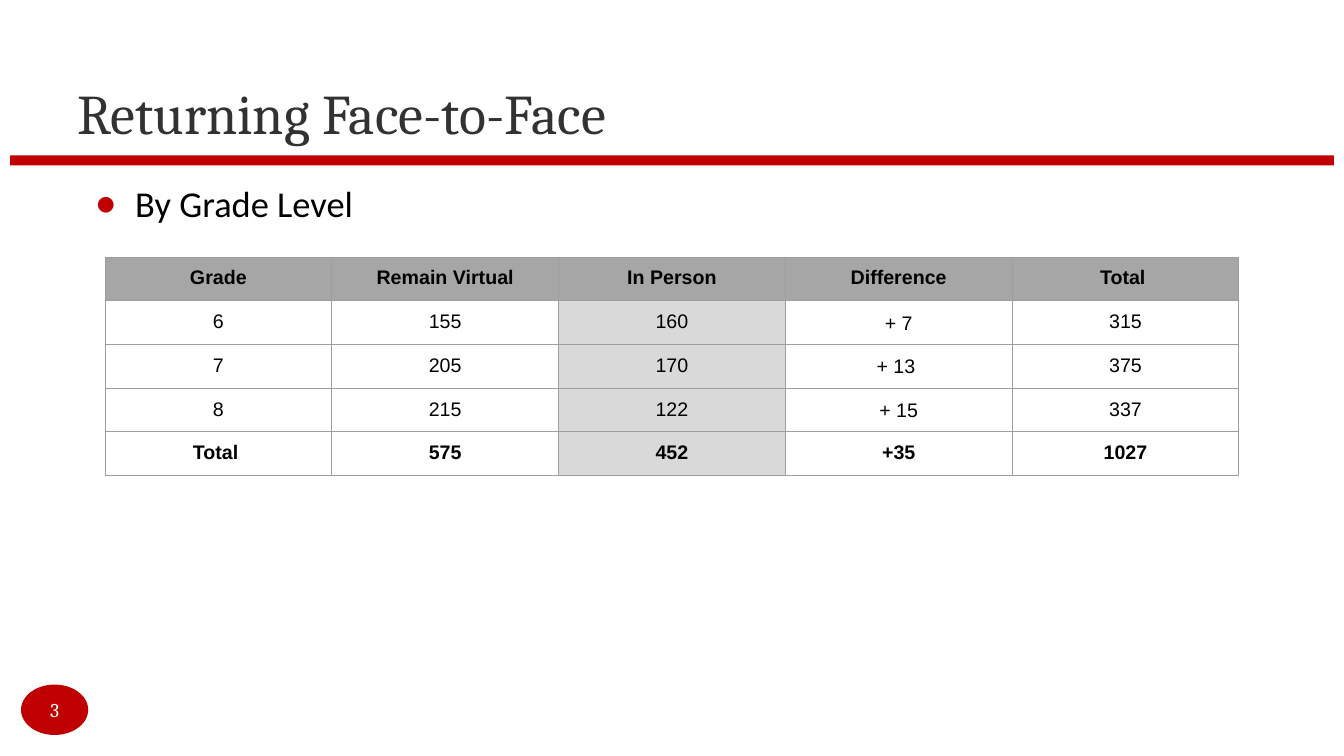
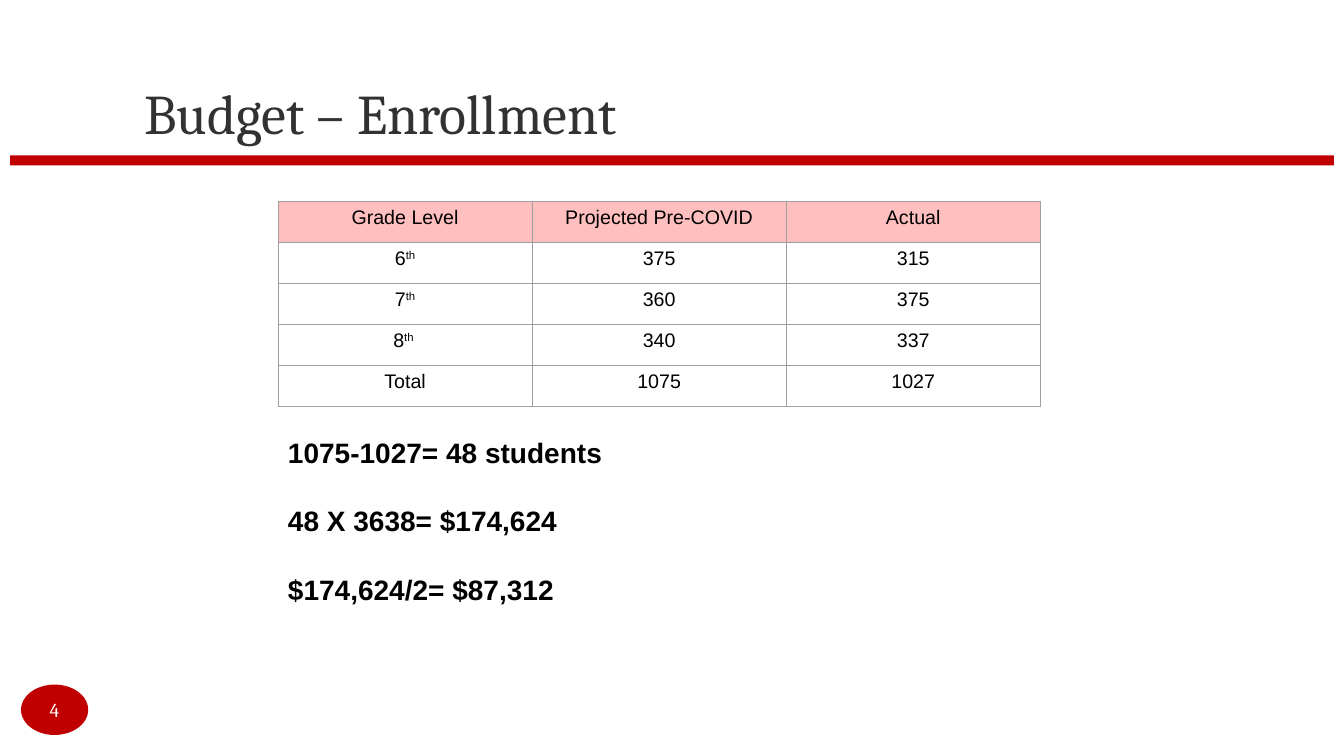
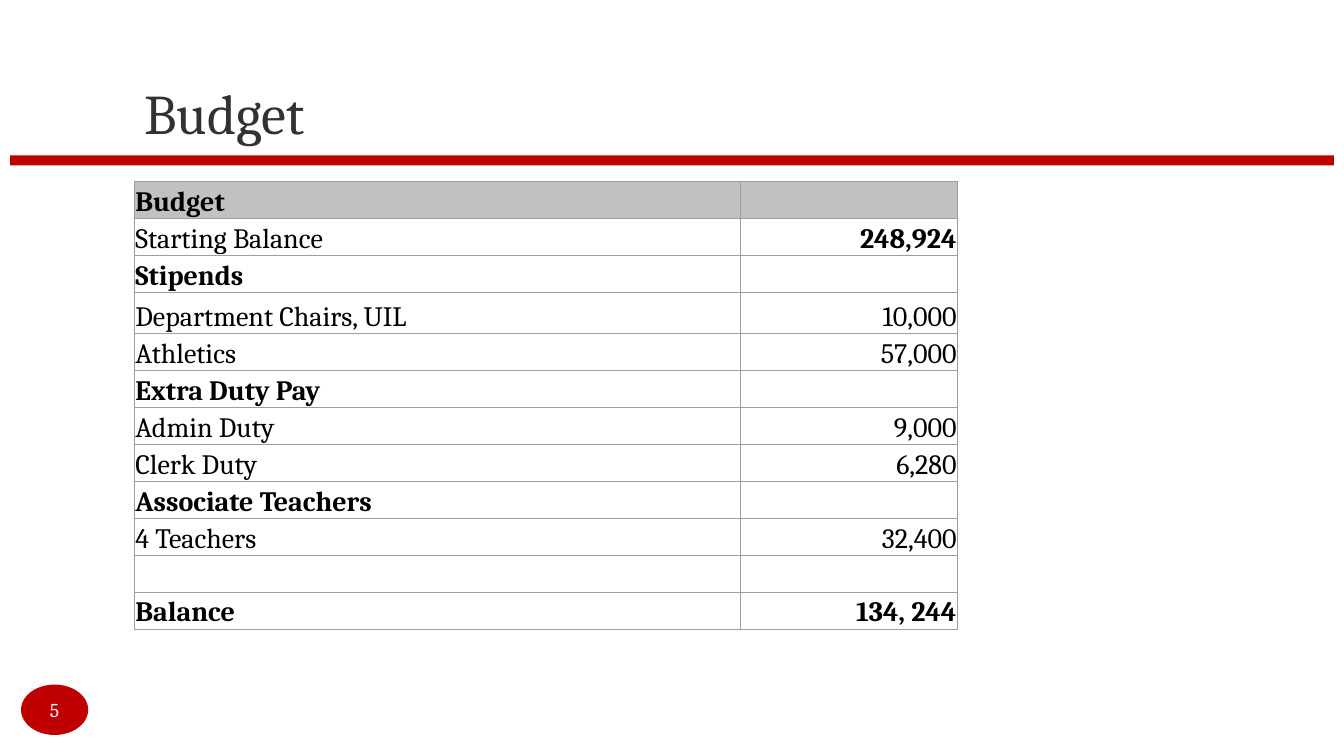
from dataclasses import dataclass
from typing import Callable, Optional

from lxml import etree
from pptx import Presentation, util as u
from pptx.dml.color import RGBColor
from pptx.enum import shapes, text
from pptx.oxml import ns

# Shared look
RED = RGBColor(0xC0, 0x00, 0x00)
WHITE = RGBColor(0xFF, 0xFF, 0xFF)
BLACK = RGBColor(0x00, 0x00, 0x00)
TITLE_GREY = RGBColor(0x32, 0x32, 0x32)
BORDER_GREY = RGBColor(0x9E, 0x9E, 0x9E)
HEADER_GREY = RGBColor(0xA6, 0xA6, 0xA6)
COLUMN_GREY = RGBColor(0xD9, 0xD9, 0xD9)
BUDGET_GREY = RGBColor(0xC1, 0xC1, 0xC1)
PINK = RGBColor(0xFF, 0xBF, 0xBF)
SERIF, SANS, BODY = "Cambria", "Arial", "Calibri"
LEFT, CENTER, RIGHT = text.PP_ALIGN.LEFT, text.PP_ALIGN.CENTER, text.PP_ALIGN.RIGHT

# The slide is a grid of 160 columns by 90 rows
WIDTH, HEIGHT = u.Inches(13.33), u.Inches(7.5)
COLUMNS, ROWS = 160, 90


def col(n: float) -> u.Emu:
    return u.Emu(round(WIDTH * n / COLUMNS))


def row(n: float) -> u.Emu:
    return u.Emu(round(HEIGHT * n / ROWS))


@dataclass(frozen=True)
class Box:
    x: float
    y: float
    w: float
    h: float

    def emu(self) -> tuple:
        return col(self.x), row(self.y), col(self.w), row(self.h)


@dataclass(frozen=True)
class Grid:
    """A table: a caret in a cell's text starts a superscript."""
    x: float
    y: float
    widths: list
    heights: list
    cells: list
    aligns: list
    font: str
    size: int
    margins: tuple  # left, top, right, bottom, in inches
    anchor: text.MSO_ANCHOR
    fill: Callable[[int, int], Optional[RGBColor]]
    bold: Callable[[int, int], bool]


BAND = Box(1.2, 18.5, 157.6, 1.2)
BADGE = Box(2.5, 81.5, 8, 6)


def style(font, name: str, size: float, color: RGBColor, bold: bool = False) -> None:
    font.name, font.size, font.bold = name, u.Pt(size), bold
    font.color.rgb = color


def set_margins(target, left: float, top: float, right: float, bottom: float) -> None:
    target.margin_left, target.margin_top = u.Inches(left), u.Inches(top)
    target.margin_right, target.margin_bottom = u.Inches(right), u.Inches(bottom)


def add_red_shape(slide, kind: shapes.MSO_SHAPE, box: Box):
    sp = slide.shapes.add_shape(kind, *box.emu())
    sp.shadow.inherit = False
    sp.fill.solid()
    sp.fill.fore_color.rgb = RED
    sp.line.fill.background()
    return sp


def add_slide(prs, layout: int, title: str, title_x: float, number: int):
    """Slide with the title, red band and number badge."""
    slide = prs.slides.add_slide(prs.slide_layouts[layout])
    add_red_shape(slide, shapes.MSO_SHAPE.RECTANGLE, BAND)

    badge = add_red_shape(slide, shapes.MSO_SHAPE.OVAL, BADGE)
    tf = badge.text_frame
    tf.text = str(number)
    set_margins(tf, 0, 0, 0, 0)
    tf.vertical_anchor = text.MSO_ANCHOR.MIDDLE
    tf.paragraphs[0].alignment = CENTER
    style(tf.paragraphs[0].runs[0].font, SERIF, 14, WHITE)

    sp = slide.shapes.title
    sp.left, sp.top, sp.width, sp.height = Box(title_x, 3.6, 136, 15).emu()
    tf = sp.text_frame
    tf.text = title
    tf.auto_size = text.MSO_AUTO_SIZE.NONE
    tf.vertical_anchor = text.MSO_ANCHOR.BOTTOM
    set_margins(tf, 0.1, 0.05, 0.1, 0.1)
    tf.paragraphs[0].alignment = LEFT
    style(tf.paragraphs[0].runs[0].font, SERIF, 40, TITLE_GREY)
    return slide


def add_bullet(p) -> None:
    pPr = p._p.get_or_add_pPr()
    pPr.set("marL", str(u.Inches(0.5)))
    pPr.set("indent", str(u.Inches(-0.4)))
    color = etree.SubElement(pPr, ns.qn("a:buClr"))
    etree.SubElement(color, ns.qn("a:srgbClr")).set("val", str(RED))
    etree.SubElement(pPr, ns.qn("a:buChar")).set("char", "●")


def add_borders(cell) -> None:
    tcPr = cell._tc.get_or_add_tcPr()
    for side in ("lnL", "lnR", "lnT", "lnB"):
        ln = etree.SubElement(tcPr, ns.qn(f"a:{side}"))
        ln.set("w", str(u.Pt(0.75)))
        fill = etree.SubElement(ln, ns.qn("a:solidFill"))
        etree.SubElement(fill, ns.qn("a:srgbClr")).set("val", str(BORDER_GREY))


def fill_cell(cell, grid: Grid, i: int, j: int) -> None:
    add_borders(cell)
    color = grid.fill(i, j)
    if color is None:
        cell.fill.background()
    else:
        cell.fill.solid()
        cell.fill.fore_color.rgb = color
    set_margins(cell, *grid.margins)
    cell.vertical_anchor = grid.anchor
    p = cell.text_frame.paragraphs[0]
    p.alignment = grid.aligns[j]
    if not grid.cells[i][j]:
        return
    for k, part in enumerate(grid.cells[i][j].split("^")):
        r = p.add_run()
        r.text = part
        style(r.font, grid.font, grid.size, BLACK, grid.bold(i, j))
        if k:
            r._r.get_or_add_rPr().set("baseline", "30000")


def add_grid(slide, grid: Grid):
    box = Box(grid.x, grid.y, sum(grid.widths), sum(grid.heights))
    frame = slide.shapes.add_table(len(grid.heights), len(grid.widths), *box.emu())
    table = frame.table
    table.first_row = table.horz_banding = False
    for column, width in zip(table.columns, grid.widths):
        column.width = col(width)
    for i, height in enumerate(grid.heights):
        table.rows[i].height = row(height)
        for j in range(len(grid.widths)):
            fill_cell(table.cell(i, j), grid, i, j)
    return table


def returning_slide(prs) -> None:
    slide = add_slide(prs, 1, "Returning Face-to-Face", 8, 3)

    # Bullet line
    body = slide.placeholders[1]
    body.left, body.top, body.width, body.height = Box(8.9, 21, 144.6, 60).emu()
    tf = body.text_frame
    tf.text = "By Grade Level"
    tf.auto_size = text.MSO_AUTO_SIZE.NONE
    p = tf.paragraphs[0]
    p.space_before = u.Pt(0)
    add_bullet(p)
    style(p.runs[0].font, BODY, 26, BLACK)

    # Students by grade
    def fill(i: int, j: int) -> Optional[RGBColor]:
        if i == 0:
            return HEADER_GREY
        return COLUMN_GREY if j == 2 else None

    cells = [
        ["Grade", "Remain Virtual", "In Person", "Difference", "Total "],
        ["6", "155", "160", "+ 7", "315"],
        ["7", "205", "170", "+ 13 ", "375"],
        ["8", "215", "122", "+ 15", "337"],
        ["Total ", "575", "452", "+35", "1027"],
    ]
    table = add_grid(slide, Grid(
        12.5, 30.6, [27] * 5, [5.2] * 5, cells, [CENTER] * 5, SANS, 14,
        (0.1, 0.1, 0.1, 0.1), text.MSO_ANCHOR.TOP, fill, lambda i, j: i in (0, 4)))
    for i in range(1, 4):
        table.cell(i, 3).text_frame.paragraphs[0].line_spacing = 1.07


def enrollment_slide(prs) -> None:
    slide = add_slide(prs, 5, "Budget – Enrollment", 16, 4)

    # Projected and actual enrollment
    cells = [
        ["Grade Level", "Projected Pre-COVID", "Actual"],
        ["6^th", "375", "315"],
        ["7^th", "360", "375"],
        ["8^th ", "340", "337"],
        ["Total", "1075", "1027"],
    ]
    add_grid(slide, Grid(
        33.1, 24, [30.25] * 3, [4.88] * 5, cells, [CENTER] * 3, SANS, 14,
        (0.1, 0.05, 0.1, 0.05), text.MSO_ANCHOR.TOP,
        lambda i, j: PINK if i == 0 else None, lambda i, j: False))

    # Calculation
    sp = slide.shapes.add_textbox(*Box(33.1, 51.2, 143.5 - 17, 21.4).emu())
    tf = sp.text_frame
    tf.word_wrap = True
    tf.text = "1075-1027= 48 students\n48 X 3638= $174,624\n$174,624/2= $87,312"
    for k, p in enumerate(tf.paragraphs):
        p.space_before = u.Pt(25 if k else 0)
        style(p.runs[0].font, SANS, 20, BLACK, True)


def budget_slide(prs) -> None:
    slide = add_slide(prs, 5, "Budget", 16, 5)
    cells = [
        ["Budget", ""],
        ["Starting Balance", "248,924"],
        ["Stipends", ""],
        ["Department Chairs, UIL", "10,000"],
        ["Athletics", "57,000"],
        ["Extra Duty Pay", ""],
        ["Admin Duty", "9,000"],
        ["Clerk Duty", "6,280"],
        ["Associate Teachers", ""],
        ["4 Teachers", "32,400"],
        ["", ""],
        ["Balance", "134, 244"],
    ]
    last = len(cells) - 1

    def bold(i: int, j: int) -> bool:
        # Headings have no amount; both balances stand out
        return not cells[i][1] or i == last or (i, j) == (1, 1)

    heights = [4.9 if i == 3 else 4.4 for i in range(len(cells))]
    add_grid(slide, Grid(
        16, 21.6, [72.2, 25.8], heights, cells, [LEFT, RIGHT], SERIF, 20,
        (0.01, 0.01, 0.01, 0), text.MSO_ANCHOR.BOTTOM,
        lambda i, j: BUDGET_GREY if i == 0 else None, bold))


def main() -> None:
    prs = Presentation()
    prs.slide_width, prs.slide_height = WIDTH, HEIGHT
    returning_slide(prs)
    enrollment_slide(prs)
    budget_slide(prs)
    prs.save("out.pptx")


if __name__ == "__main__":
    main()
